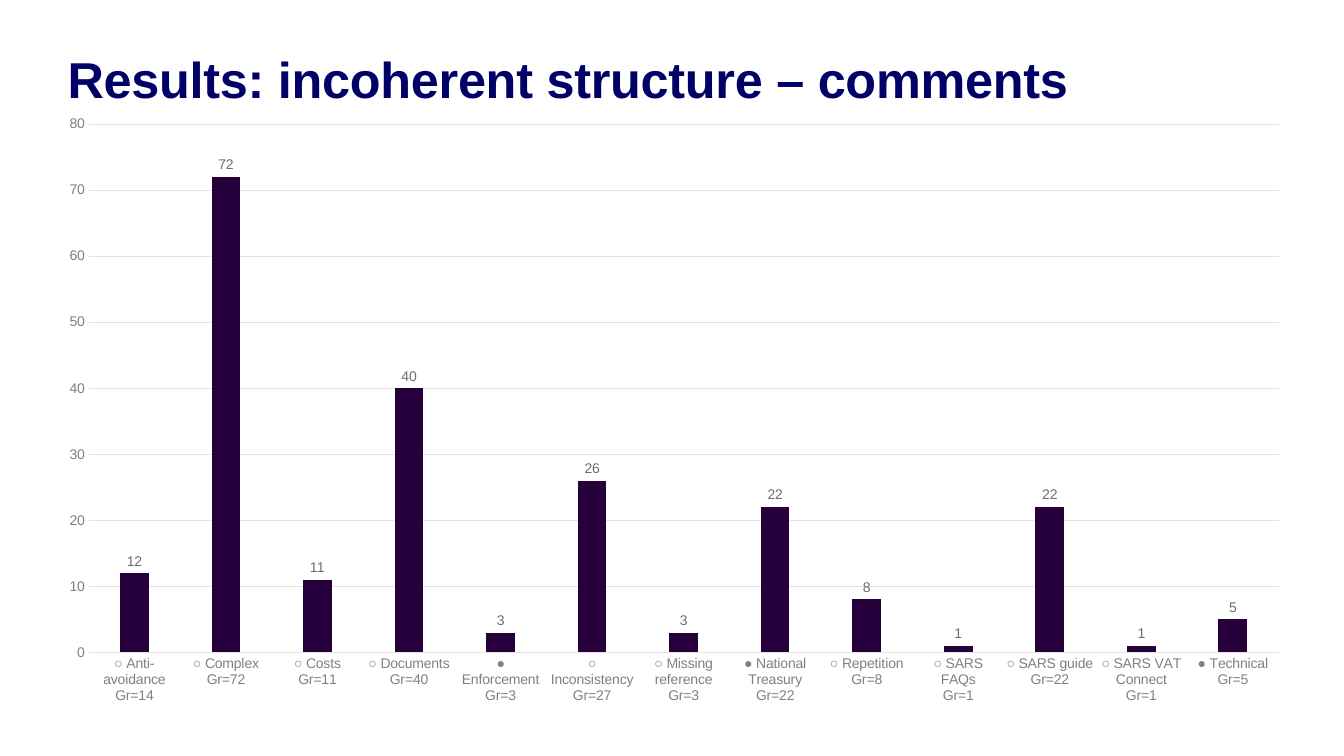
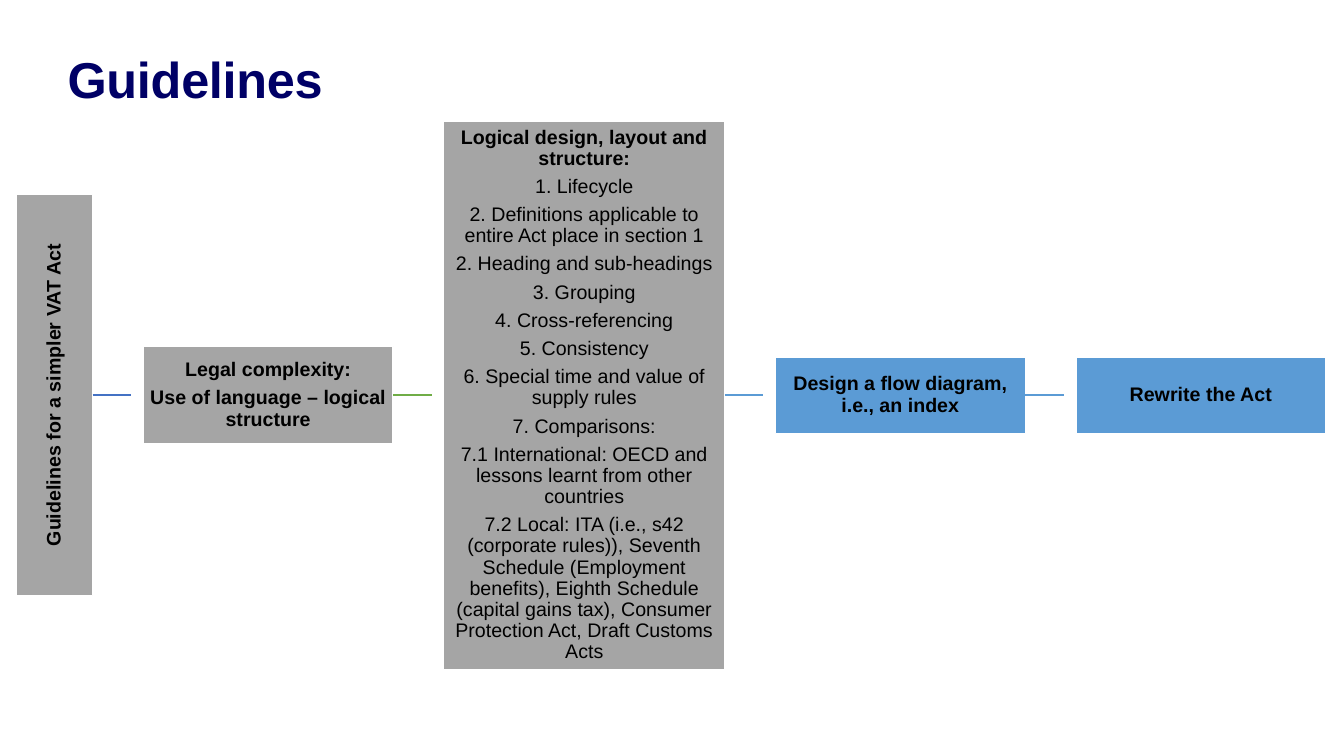
"""Build two slides: a chart of comment counts and a guidelines flow."""
import lxml.etree
import pptx
import pptx.chart.data
import pptx.dml.color
import pptx.enum.chart
import pptx.enum.shapes
import pptx.enum.text
import pptx.oxml
import pptx.oxml.ns
import pptx.util

PX = 9144
FONT = "Arial"
NAVY, PURPLE, BLACK, WHITE = "000066", "26003B", "000000", "FFFFFF"
AXIS_GREY, LABEL_GREY, GRID_GREY = "808080", "6D6D6D", "E2E2E2"
BOX_GREY, BOX_BLUE, LINE_BLUE, LINE_GREEN = "A5A5A5", "5B9BD5", "4472C4", "70AD47"
FLOW_LEFT, FLOW_MIDDLE, FLOW_GAP, LINK_LENGTH = 16, 392, 50, 38

COMMENTS = [
    ("○ Anti-avoidance\nGr=14", 12),
    ("○ Complex\nGr=72", 72),
    ("○ Costs\nGr=11", 11),
    ("○ Documents\nGr=40", 40),
    ("● Enforcement\nGr=3", 3),
    ("○ Inconsistency\nGr=27", 26),
    ("○ Missing reference\nGr=3", 3),
    ("● National Treasury\nGr=22", 22),
    ("○ Repetition\nGr=8", 8),
    ("○ SARS FAQs\nGr=1", 1),
    ("○ SARS guide\nGr=22", 22),
    ("○ SARS VAT Connect\nGr=1", 1),
    ("● Technical\nGr=5", 5),
]

LEGAL = ["Legal complexity:", "Use of language – logical structure"]
DESIGN_HEAD = ["Logical design, layout and structure:"]
DESIGN_ITEMS = [
    "1. Lifecycle",
    "2. Definitions applicable to entire Act place in section 1",
    "2. Heading and sub-headings",
    "3. Grouping",
    "4. Cross-referencing",
    "5. Consistency",
    "6. Special time and value of supply rules",
    "7. Comparisons:",
    "7.1 International: OECD and lessons learnt from other countries",
    "7.2 Local: ITA (i.e., s42 (corporate rules)), Seventh Schedule "
    "(Employment benefits), Eighth Schedule (capital gains tax), "
    "Consumer Protection Act, Draft Customs Acts",
]

# width, height, fill, bold lines, plain lines, vertical, colour of the link after
STEPS = [
    (76, 398, BOX_GREY, ["Guidelines for a simpler VAT Act"], [], True, LINE_BLUE),
    (248, 97, BOX_GREY, LEGAL, [], False, LINE_GREEN),
    (279, 544, BOX_GREY, DESIGN_HEAD, DESIGN_ITEMS, False, BOX_BLUE),
    (248, 76, BOX_BLUE, ["Design a flow diagram, i.e., an index"], [], False, BOX_BLUE),
    (248, 76, BOX_BLUE, ["Rewrite the Act"], [], False, None),
]


def px(*lengths):
    """Turn pixel lengths into EMU."""
    return [pptx.util.Emu(round(n * PX)) for n in lengths]


def rgb(value):
    """Turn a hex string into a colour."""
    return pptx.dml.color.RGBColor.from_string(value)


def style_font(font, size, color, bold=False):
    """Set the face, size, colour and weight of a font."""
    font.name, font.size, font.bold = FONT, pptx.util.Pt(size), bold
    font.color.rgb = rgb(color)


def style_line(line, color, width):
    """Set the colour and width of a line."""
    line.color.rgb = rgb(color)
    line.width = pptx.util.Pt(width)


def set_frame(tf, anchor, inset):
    """Set wrapping, anchor and equal insets of a text frame."""
    tf.word_wrap, tf.vertical_anchor = True, anchor
    tf.margin_left = tf.margin_top = tf.margin_right = tf.margin_bottom = px(inset)[0]


def add_titled_slide(prs, title):
    """Add a blank slide with the shared title style."""
    s = prs.slides.add_slide(prs.slide_layouts[6])
    tf = s.shapes.add_textbox(*px(67, 30, 1226, 79)).text_frame
    set_frame(tf, pptx.enum.text.MSO_ANCHOR.BOTTOM, 0)
    p = tf.paragraphs[0]
    p.text, p.line_spacing = title, 0.9
    style_font(p.font, 36, NAVY, True)
    p._p.get_or_add_pPr().get_or_add_defRPr().set("spc", "-20")
    return s


def set_plot_layout(chart, **fractions):
    """Place the inner plot area by fractions of the chart."""
    area = chart._chartSpace.chart.plotArea
    qn = pptx.oxml.ns.qn
    for old in area.findall(qn("c:layout")):
        area.remove(old)
    layout = lxml.etree.Element(qn("c:layout"))
    manual = lxml.etree.SubElement(layout, qn("c:manualLayout"))
    settings = {"layoutTarget": "inner", "xMode": "edge", "yMode": "edge", **fractions}
    for name, value in settings.items():
        lxml.etree.SubElement(manual, qn("c:" + name)).set("val", str(value))
    area.insert(0, layout)


def add_column_chart(s, rows):
    """Add the column chart of counts by code."""
    enum = pptx.enum.chart
    data = pptx.chart.data.CategoryChartData()
    data.categories = [name for name, _ in rows]
    data.add_series("Series 1", [count for _, count in rows])
    chart = s.shapes.add_chart(
        enum.XL_CHART_TYPE.COLUMN_CLUSTERED, *px(51, 108, 1232, 608), data
    ).chart
    chart.has_title = chart.has_legend = False
    set_plot_layout(chart, x=0.03, y=0.025, w=0.958, h=0.862)
    for axis in (chart.category_axis, chart.value_axis):
        axis.major_tick_mark = axis.minor_tick_mark = enum.XL_TICK_MARK.NONE
        style_font(axis.tick_labels.font, 10, AXIS_GREY)
    style_line(chart.category_axis.format.line, GRID_GREY, 0.75)
    values = chart.value_axis
    values.minimum_scale, values.maximum_scale, values.major_unit = 0, 80, 10
    values.format.line.fill.background()
    style_line(values.major_gridlines.format.line, GRID_GREY, 0.75)
    plot = chart.plots[0]
    plot.gap_width, plot.overlap, plot.vary_by_categories = 219, -27, False
    fill = plot.series[0].format.fill
    fill.solid()
    fill.fore_color.rgb = rgb(PURPLE)
    plot.has_data_labels = True
    labels = plot.data_labels
    labels.show_value, labels.position = True, enum.XL_LABEL_POSITION.OUTSIDE_END
    style_font(labels.font, 10, LABEL_GREY)


def add_step(s, left, width, height, fill, bold_lines, plain_lines, vertical):
    """Add one box of the flow, centred on its middle line."""
    sp = s.shapes.add_shape(
        pptx.enum.shapes.MSO_SHAPE.RECTANGLE,
        *px(left, FLOW_MIDDLE - height / 2, width, height),
    )
    sp.shadow.inherit = False
    sp.fill.solid()
    sp.fill.fore_color.rgb = rgb(fill)
    style_line(sp.line, WHITE, 1)
    tf = sp.text_frame
    set_frame(tf, pptx.enum.text.MSO_ANCHOR.MIDDLE, 1)
    if vertical:
        tf._txBody.bodyPr.set("vert", "vert270")
    for i, text in enumerate(bold_lines + plain_lines):
        p = tf.add_paragraph() if i else tf.paragraphs[0]
        p.text, p.alignment = text, pptx.enum.text.PP_ALIGN.CENTER
        p.line_spacing, p.space_after = 0.9, pptx.util.Pt(5)
        style_font(p.font, 14, BLACK, i < len(bold_lines))
    return sp


def add_link(s, sp, right, color):
    """Add a short line that leaves the right side of a box."""
    link = s.shapes.add_connector(
        pptx.enum.shapes.MSO_CONNECTOR.STRAIGHT,
        *px(right, FLOW_MIDDLE, right + LINK_LENGTH, FLOW_MIDDLE),
    )
    link.begin_connect(sp, 3)
    style_line(link.line, color, 1)
    lxml.etree.SubElement(link._element.spPr, pptx.oxml.ns.qn("a:effectLst"))


def add_flow(s, steps):
    """Add the boxes from left to right with links between them."""
    left = FLOW_LEFT
    for width, *box, link_color in steps:
        sp = add_step(s, left, width, *box)
        if link_color:
            add_link(s, sp, left + width, link_color)
        left += width + FLOW_GAP


def main():
    """Build and save the presentation."""
    prs = pptx.Presentation()
    prs.slide_width, prs.slide_height = px(1333, 750)
    add_column_chart(
        add_titled_slide(prs, "Results: incoherent structure – comments"), COMMENTS
    )
    add_flow(add_titled_slide(prs, "Guidelines"), STEPS)
    prs.save("out.pptx")


if __name__ == "__main__":
    main()
